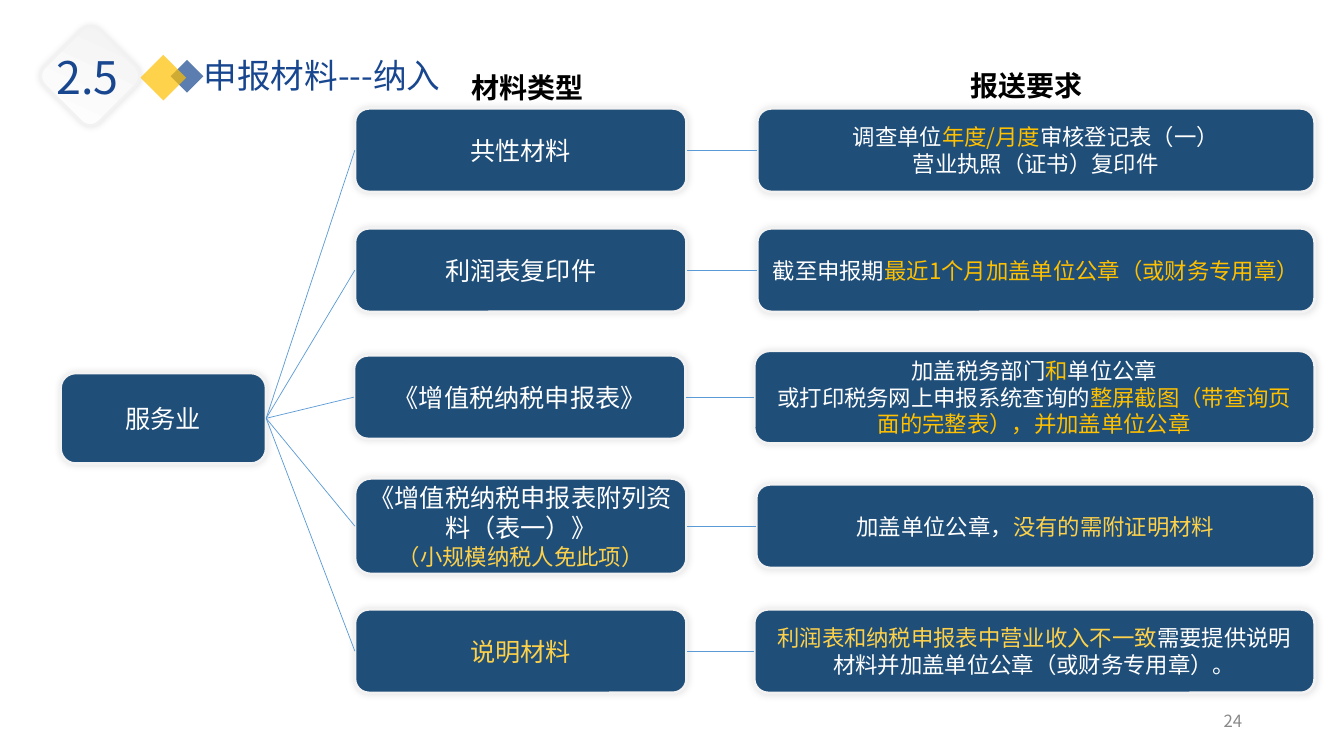
from lxml.etree import SubElement
from pptx import Presentation
from pptx.dml.color import RGBColor
from pptx.enum.shapes import MSO_CONNECTOR, MSO_SHAPE
from pptx.enum.text import MSO_ANCHOR, PP_ALIGN
from pptx.oxml.ns import qn
from pptx.util import Inches, Pt

NAVY = RGBColor(0x1F, 0x4E, 0x79)
BLUE = RGBColor(0x18, 0x47, 0x8F)
SKY = RGBColor(0x5B, 0x9B, 0xD5)
GOLD = RGBColor(0xFF, 0xC0, 0x00)
SAND = RGBColor(0xFD, 0xD1, 0x4A)
WHITE = RGBColor(0xFF, 0xFF, 0xFF)
PALE = RGBColor(0xF2, 0xF2, 0xF2)
GRAY = RGBColor(0x89, 0x89, 0x89)
BLACK = RGBColor(0, 0, 0)
SANS = "Noto Sans CJK SC"

# Each paragraph is (size, runs); each run is (text, colour).
TITLE = [(24, [("申报材料---纳入", BLUE)])]
SECTOR = [(18, [("服务业", WHITE)])]

# Middle of row, then (left, height, paragraphs) of the type and of the demand
ROWS = [
    (1.49,
     (3.52, 0.83, [(18, [("共性材料", WHITE)])]),
     (7.51, 0.83, [(16, [("调查单位", WHITE), ("年度/月度", GOLD),
                         ("审核登记表（一）", WHITE)]),
                   (16, [("营业执照（证书）复印件", WHITE)])])),
    (2.68,
     (3.52, 0.83, [(18, [("利润表复印件", WHITE)])]),
     (7.51, 0.83, [(16, [("截至申报期", WHITE),
                         ("最近1个月加盖单位公章（或财务专用章）", GOLD)])])),
    (3.94,
     (3.51, 0.83, [(18, [("《增值税纳税申报表》", WHITE)])]),
     (7.48, 0.92, [(16, [("加盖税务部门", WHITE), ("和", GOLD),
                         ("单位公章", WHITE)]),
                   (16, [("或打印税务网上申报系统查询的", WHITE),
                         ("整屏截图（带查询页面的完整表），并加盖单位公章", GOLD)])])),
    (5.22,
     (3.52, 0.95, [(18, [("《增值税纳税申报表附列资料（表一）》", WHITE)]),
                   (16, [("（小规模纳税人免此项）", SAND)])]),
     (7.5, 0.83, [(16, [("加盖单位公章，", WHITE),
                        ("没有的需附证明材料", SAND)])])),
    (6.46,
     (3.52, 0.83, [(18, [("说明材料", SAND)])]),
     (7.48, 0.83, [(16, [("利润表和纳税申报表中营业收入不一致", SAND),
                         ("需要提供说明材料并加盖单位公章（或财务专用章）。", WHITE)])])),
]
TYPE_WIDTH = 3.29
RIGHT_EDGE = 13.04

# Place, paragraphs and format of the loose labels
LABELS = [
    ((0.46, 0.44, 0.84, 0.64), [(32, [("2.5", BLUE)])], {"wrap": False}),
    ((4.58, 0.65, 1.76, 0.44), [(20, [("材料类型", BLACK)])],
     {"face": "Arial", "bold": True}),
    ((9.53, 0.63, 1.41, 0.44), [(20, [("报送要求", BLACK)])],
     {"face": "Arial", "bold": True}),
    ((9.42, 6.95, 3, 0.4), [(12, [("24", GRAY)])],
     {"align": PP_ALIGN.RIGHT, "anchor": MSO_ANCHOR.MIDDLE}),
]


def write(shape, paras, face=SANS, bold=False, align=PP_ALIGN.LEFT,
          anchor=MSO_ANCHOR.TOP, wrap=True):
    frame = shape.text_frame
    frame.word_wrap = wrap
    frame.vertical_anchor = anchor
    for i, (size, runs) in enumerate(paras):
        para = frame.add_paragraph() if i else frame.paragraphs[0]
        para.alignment = align
        for text, color in runs:
            run = para.add_run()
            run.text = text
            look = {"name": face, "size": Pt(size), "bold": bold}
            for key, value in look.items():
                setattr(run.font, key, value)
            run.font.color.rgb = color
            east = SubElement(run.font._element, qn("a:ea"))
            east.set("typeface", SANS)


def glow(shape):
    """Give a pale edge and a soft, centred shadow."""
    shape.line.color.rgb = PALE
    shape.line.width = Pt(2)
    shape.shadow.inherit = False
    effects = shape._element.spPr.find(qn("a:effectLst"))
    soft = SubElement(effects, qn("a:outerShdw"), blurRad=str(Pt(5)),
                      dist="0", dir="0", algn="ctr", rotWithShape="0")
    color = SubElement(soft, qn("a:srgbClr"), val="000000")
    SubElement(color, qn("a:alpha"), val="11000")


def card(place, paras):
    box = slide.shapes.add_shape(MSO_SHAPE.ROUNDED_RECTANGLE,
                                 *map(Inches, place))
    box.fill.solid()
    box.fill.fore_color.rgb = NAVY
    glow(box)
    write(box, paras, align=PP_ALIGN.CENTER, anchor=MSO_ANCHOR.MIDDLE)
    return box


def gem(left, top, side, color):
    """Draw a see-through square turned on its corner."""
    shape = slide.shapes.add_shape(MSO_SHAPE.RECTANGLE,
                                   *map(Inches, (left, top, side, side)))
    shape.rotation = 225
    shape.fill.solid()
    shape.fill.fore_color.rgb = color
    tint = shape._element.spPr.find(".//" + qn("a:srgbClr"))
    SubElement(tint, qn("a:alpha"), val="70000")
    shape.line.fill.background()
    shape.shadow.inherit = False


def link(start, end):
    """Join the right side of one card to the left side of the next."""
    line = slide.shapes.add_connector(MSO_CONNECTOR.STRAIGHT, 0, 0, 0, 0)
    line.begin_connect(start, 3)
    line.end_connect(end, 1)
    line.line.color.rgb = SKY
    line.line.width = Pt(0.5)
    SubElement(line._element.spPr, qn("a:effectLst"))


deck = Presentation()
deck.slide_width, deck.slide_height = Inches(13.33), Inches(7.5)
slide = deck.slides.add_slide(deck.slide_layouts[5])

title = slide.shapes.title
spot = {"left": 1.92, "top": 0.49, "width": 4.55, "height": 0.5}
for key, value in spot.items():
    setattr(title, key, Inches(value))
write(title, TITLE)

gem(1.74, 0.64, 0.23, BLUE)
badge = slide.shapes.add_shape(MSO_SHAPE.ROUNDED_RECTANGLE,
                               *map(Inches, (0.51, 0.37, 0.77, 0.77)))
badge.rotation = 45
badge.fill.gradient()
badge.fill.gradient_angle = 110
for stop, color in zip(badge.fill.gradient_stops, (WHITE, PALE)):
    stop.color.rgb = color
glow(badge)
gem(1.46, 0.61, 0.32, GOLD)

hub = card((0.6, 3.7, 2.04, 0.9), SECTOR)
for mid, (left, high, kind), (start, tall, demand) in ROWS:
    first = card((left, mid - high / 2, TYPE_WIDTH, high), kind)
    second = card((start, mid - tall / 2, RIGHT_EDGE - start, tall), demand)
    link(hub, first)
    link(first, second)

for place, paras, form in LABELS:
    write(slide.shapes.add_textbox(*map(Inches, place)), paras, **form)

deck.save("out.pptx")
